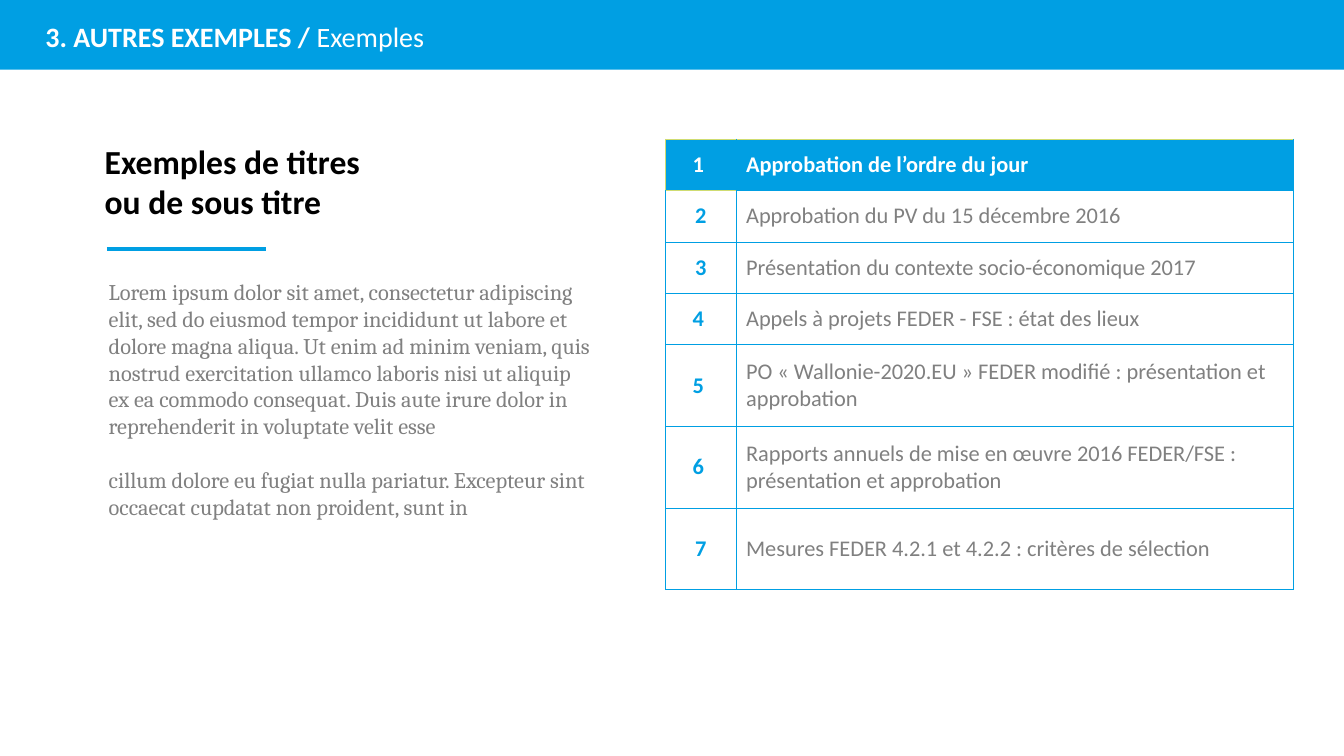
from lxml.etree import SubElement
from pptx import Presentation
from pptx.dml.color import RGBColor
from pptx.enum.shapes import MSO_CONNECTOR, MSO_SHAPE
from pptx.enum.text import MSO_ANCHOR, MSO_AUTO_SIZE, PP_ALIGN
from pptx.oxml.ns import qn
from pptx.util import Inches, Pt

BLUE, GREEN, GREY, WHITE, BLACK = "009FE3", "CFDC71", "808080", "FFFFFF", "000000"

AGENDA = [
    ("1 ", "Approbation de l’ordre du jour", 0.51),
    ("2", "Approbation du PV du 15 décembre 2016", 0.51),
    ("3", "Présentation du contexte socio-économique 2017", 0.51),
    ("4 ", "Appels à projets FEDER - FSE : état des lieux", 0.51),
    ("5 ", "PO « Wallonie-2020.EU » FEDER modifié : présentation et approbation", 0.81),
    ("6 ", "Rapports annuels de mise en œuvre 2016 FEDER/FSE : présentation et approbation", 0.81),
    ("7", "Mesures FEDER 4.2.1 et 4.2.2 : critères de sélection", 0.81),
]
COLUMN_WIDTHS = (0.7, 5.53)

LOREM = [
    "Lorem ipsum dolor sit amet, consectetur adipiscing elit, sed do eiusmod tempor "
    "incididunt ut labore et dolore magna aliqua. Ut enim ad minim veniam, quis nostrud "
    "exercitation ullamco laboris nisi ut aliquip ex ea commodo consequat. Duis aute irure "
    "dolor in reprehenderit in voluptate velit esse",
    "cillum dolore eu fugiat nulla pariatur. Excepteur sint occaecat cupdatat non proident, "
    "sunt in",
]


def color(value):
    """Turn a hex string into a colour."""
    return RGBColor.from_string(value)


def add_run(paragraph, text, size, hex_color, bold=False, font_name="Calibri"):
    """Append one formatted run to a paragraph."""
    run = paragraph.add_run()
    run.text = text
    run.font.name = font_name
    run.font.size = Pt(size)
    run.font.bold = bold
    run.font.color.rgb = color(hex_color)


def add_band(slide):
    """Draw the blue header band behind everything else."""
    band = slide.shapes.add_shape(MSO_SHAPE.RECTANGLE, 0, 0, Inches(13.33), Inches(0.69))
    band.shadow.inherit = False
    band.fill.solid()
    band.fill.fore_color.rgb = color(BLUE)
    band.line.fill.background()
    slide.shapes.element.insert(2, band.element)


def set_title(slide, runs):
    """Place the title placeholder on the band and fill it with (text, bold) runs."""
    title = slide.shapes.title
    title.left, title.top = Inches(0.35), Inches(0.14)
    title.width, title.height = Inches(4.05), Inches(0.44)
    frame = title.text_frame
    frame.word_wrap = False
    frame.auto_size = MSO_AUTO_SIZE.SHAPE_TO_FIT_TEXT
    frame.vertical_anchor = MSO_ANCHOR.TOP
    paragraph = frame.paragraphs[0]
    paragraph.alignment = PP_ALIGN.LEFT
    for text, bold in runs:
        add_run(paragraph, text, 20, WHITE, bold)


def add_text(slide, box, texts, wrap, gap, **style):
    """Add a text box with one paragraph per text, set apart by a gap in points."""
    frame = slide.shapes.add_textbox(*map(Inches, box)).text_frame
    frame.word_wrap = wrap
    frame.auto_size = MSO_AUTO_SIZE.SHAPE_TO_FIT_TEXT
    for index, text in enumerate(texts):
        paragraph = frame.add_paragraph() if index else frame.paragraphs[0]
        if index and gap:
            paragraph.space_before = Pt(gap)
        add_run(paragraph, text, **style)


def add_rule(slide, left, right, top):
    """Draw the horizontal rule below the subtitle."""
    rule = slide.shapes.add_connector(
        MSO_CONNECTOR.STRAIGHT, Inches(left), Inches(top), Inches(right), Inches(top))
    rule.line.color.rgb = color(BLUE)
    rule.line.width = Pt(2.5)
    SubElement(rule.element.spPr, qn("a:effectLst"))


def set_borders(cell, **sides):
    """Give a cell thin borders, blue unless a side (L, R, T, B) names a colour."""
    properties = cell._tc.get_or_add_tcPr()
    for side in "LRTB":
        line = SubElement(properties, qn(f"a:ln{side}"), w=str(Pt(0.5)))
        fill = SubElement(line, qn("a:solidFill"))
        SubElement(fill, qn("a:srgbClr"), val=sides.get(side, BLUE))


def fill_cell(cell, text, hex_color, bold, alignment, header):
    """Write a table cell and set its background."""
    cell.vertical_anchor = MSO_ANCHOR.MIDDLE
    if header:
        cell.fill.solid()
        cell.fill.fore_color.rgb = color(BLUE)
    else:
        cell.fill.background()
    paragraph = cell.text_frame.paragraphs[0]
    paragraph.alignment = alignment
    add_run(paragraph, text, 16, hex_color, bold)


def add_agenda(slide):
    """Add the numbered agenda table with its first item highlighted."""
    heights = [height for _, _, height in AGENDA]
    table = slide.shapes.add_table(
        len(AGENDA), 2, Inches(6.6), Inches(1.38),
        Inches(sum(COLUMN_WIDTHS)), Inches(sum(heights))).table
    for column, width in zip(table.columns, COLUMN_WIDTHS):
        column.width = Inches(width)
    green_sides = {(0, 0): "LTB", (0, 1): "T", (1, 0): "T"}
    for row, (number, item, height) in enumerate(AGENDA):
        table.rows[row].height = Inches(height)
        header = row == 0
        for column in range(2):
            sides = green_sides.get((row, column), "")
            set_borders(table.cell(row, column), **dict.fromkeys(sides, GREEN))
        fill_cell(table.cell(row, 0), number, WHITE if header else BLUE, True,
                  PP_ALIGN.CENTER, header)
        fill_cell(table.cell(row, 1), item, WHITE if header else GREY, header,
                  PP_ALIGN.LEFT, header)


def main():
    """Build the slide and save it."""
    presentation = Presentation()
    presentation.slide_width, presentation.slide_height = Inches(13.33), Inches(7.5)
    slide = presentation.slides.add_slide(presentation.slide_layouts.get_by_name("Title Only"))
    add_band(slide)
    set_title(slide, [("3. AUTRES EXEMPLES / ", True), ("Exemples", False)])
    add_agenda(slide)
    add_text(slide, (0.98, 2.71, 4.98, 2.79), LOREM, True, 19,
             size=16, hex_color=GREY, font_name="Cambria")
    add_rule(slide, 1.06, 2.64, 2.47)
    add_text(slide, (0.94, 1.35, 2.76, 0.91), ["Exemples de titres", "ou de sous titre"],
             False, 0, size=24, hex_color=BLACK, bold=True)
    presentation.save("out.pptx")


if __name__ == "__main__":
    main()
